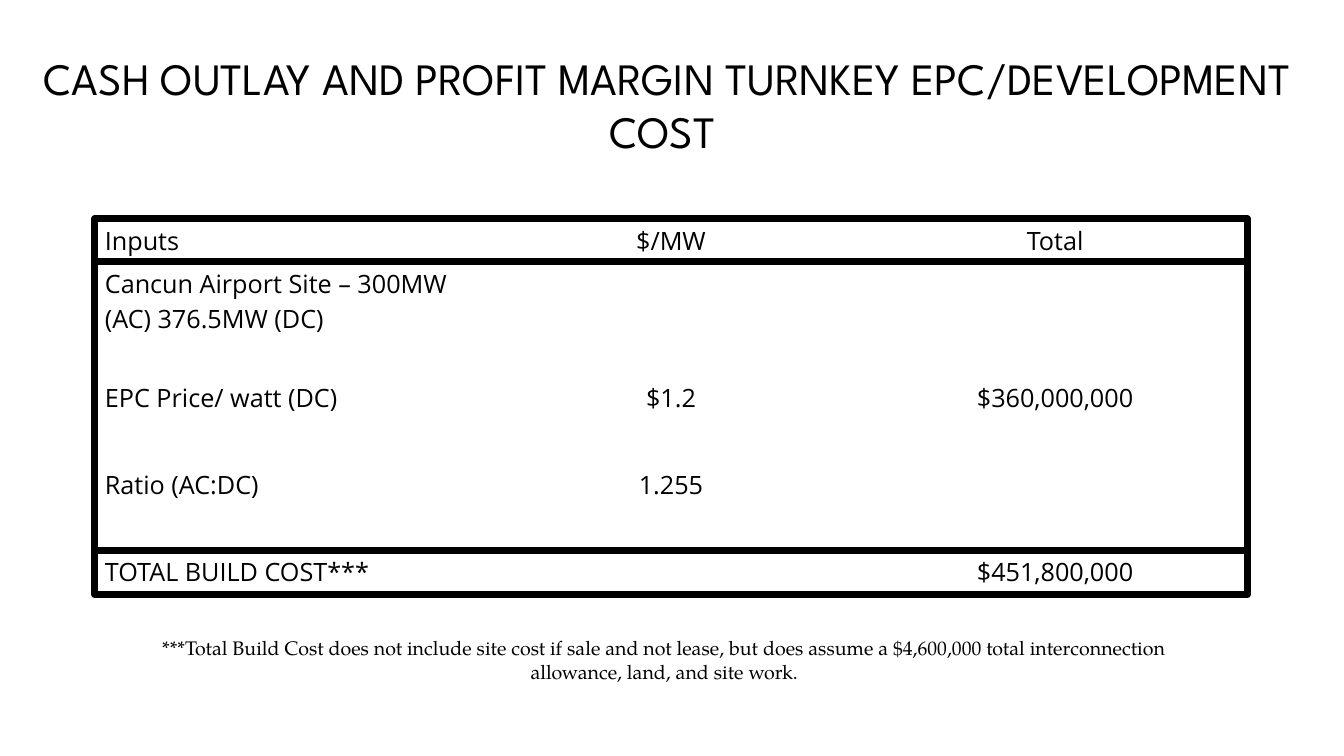
import pptx
import pptx.util
import pptx.dml.color
import pptx.enum.shapes
import pptx.enum.text
from lxml import etree

Inches = pptx.util.Inches
Pt = pptx.util.Pt
BLACK = pptx.dml.color.RGBColor(0, 0, 0)
CENTER = pptx.enum.text.PP_ALIGN.CENTER
LEFT = pptx.enum.text.PP_ALIGN.LEFT

TITLE = "CASH OUTLAY AND PROFIT MARGIN TURNKEY EPC/DEVELOPMENT COST "
FOOTNOTE = (
    "***Total Build Cost does not include site cost if sale and not lease, "
    "but does assume a $4,600,000 total interconnection allowance, land, "
    "and site work."
)
COSTS = [
    ("Inputs", "$/MW", "Total"),
    ("Cancun Airport Site – 300MW (AC) 376.5MW (DC)", "", ""),
    ("", "", ""),
    ("EPC Price/ watt (DC)", "$1.2", "$360,000,000"),
    ("", "", ""),
    ("Ratio (AC:DC)", "1.255", ""),
    ("", "", ""),
    ("TOTAL BUILD COST***", "", "$451,800,000"),
]

TABLE_LEFT, TABLE_TOP = 0.94, 2.17
TABLE_WIDTH, TABLE_HEIGHT = 11.43, 3.73
ROW_HEIGHT = 0.43
RULES = (2.59, 5.46)  # below the header and above the total
RULE_WEIGHT = 5


def write(frame, text, font_name, size, align):
    frame.text = text
    paragraph = frame.paragraphs[0]
    paragraph.alignment = align
    for run in paragraph.runs:
        run.font.name = font_name
        run.font.size = Pt(size)
        run.font.bold = False
        run.font.color.rgb = BLACK


def add_caption(slide, box, text, font_name, size):
    frame = slide.shapes.add_textbox(*map(Inches, box)).text_frame
    frame.word_wrap = True
    frame.auto_size = pptx.enum.text.MSO_AUTO_SIZE.SHAPE_TO_FIT_TEXT
    write(frame, text, font_name, size, CENTER)


def add_cost_table(slide, box):
    costs = slide.shapes.add_table(len(COSTS), len(COSTS[0]), *box).table
    costs.first_row = costs.horz_banding = False
    for column in costs.columns:
        column.width = Inches(TABLE_WIDTH / len(COSTS[0]))
    for row, values in zip(costs.rows, COSTS):
        row.height = Inches(ROW_HEIGHT)
        for index, (cell, value) in enumerate(zip(row.cells, values)):
            cell.fill.background()
            write(cell.text_frame, value, "Open Sans", 18, CENTER if index else LEFT)


def style_line(line):
    line.color.rgb = BLACK
    line.width = Pt(RULE_WEIGHT)


def add_rule(slide, y):
    rule = slide.shapes.add_connector(
        pptx.enum.shapes.MSO_CONNECTOR.STRAIGHT,
        Inches(TABLE_LEFT), Inches(y),
        Inches(TABLE_LEFT + TABLE_WIDTH), Inches(y),
    )
    style_line(rule.line)
    etree.SubElement(rule._element.spPr, pptx.oxml.ns.qn("a:effectLst"))


def main():
    deck = pptx.Presentation()
    deck.slide_width, deck.slide_height = Inches(13.33), Inches(7.5)
    slide = deck.slides.add_slide(deck.slide_layouts[6])
    table_box = [Inches(n) for n in (TABLE_LEFT, TABLE_TOP, TABLE_WIDTH, TABLE_HEIGHT)]

    add_caption(slide, (0.32, 0.45, 12.61, 1.18), TITLE, "League Spartan", 32)
    add_cost_table(slide, table_box)
    add_caption(slide, (1.26, 6.26, 10.66, 0.57), FOOTNOTE, "TeX Gyre Pagella", 14)

    border = slide.shapes.add_shape(pptx.enum.shapes.MSO_SHAPE.RECTANGLE, *table_box)
    border.shadow.inherit = False
    border.fill.background()
    style_line(border.line)
    for y in RULES:
        add_rule(slide, y)

    deck.save("out.pptx")


if __name__ == "__main__":
    main()
